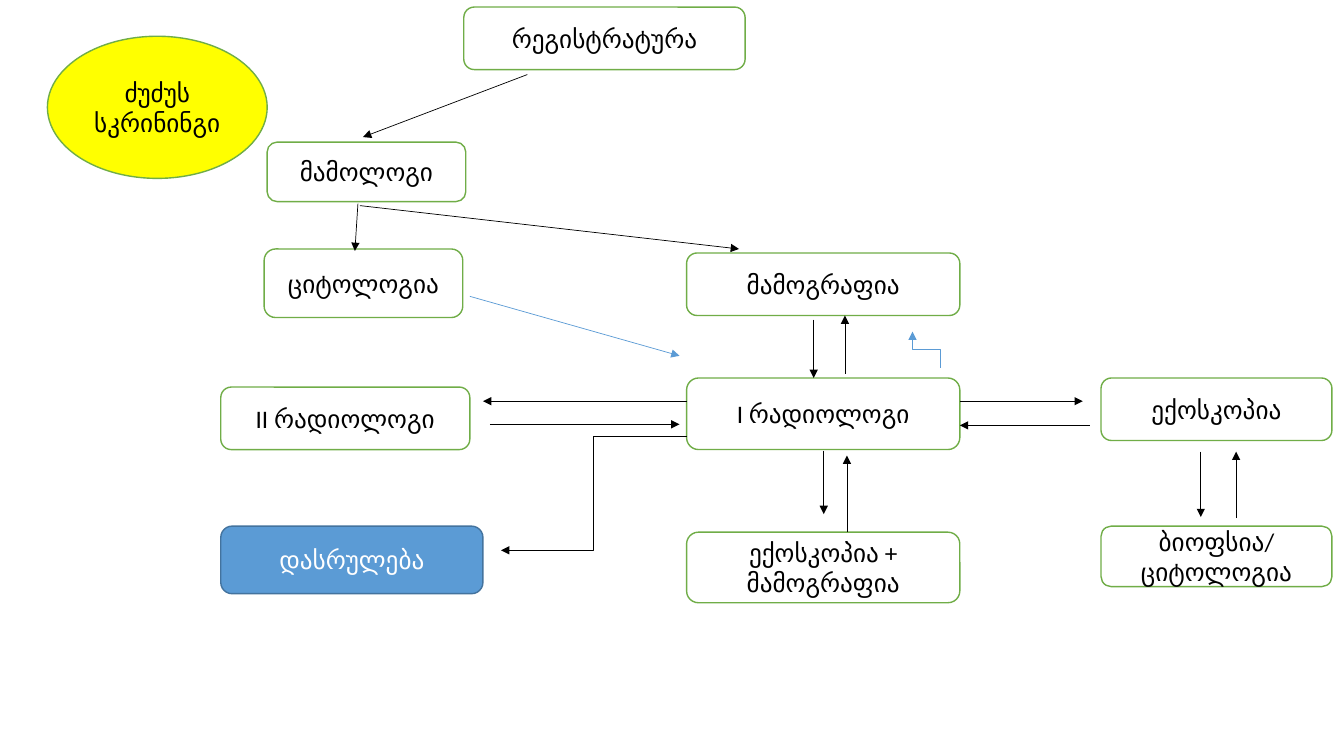
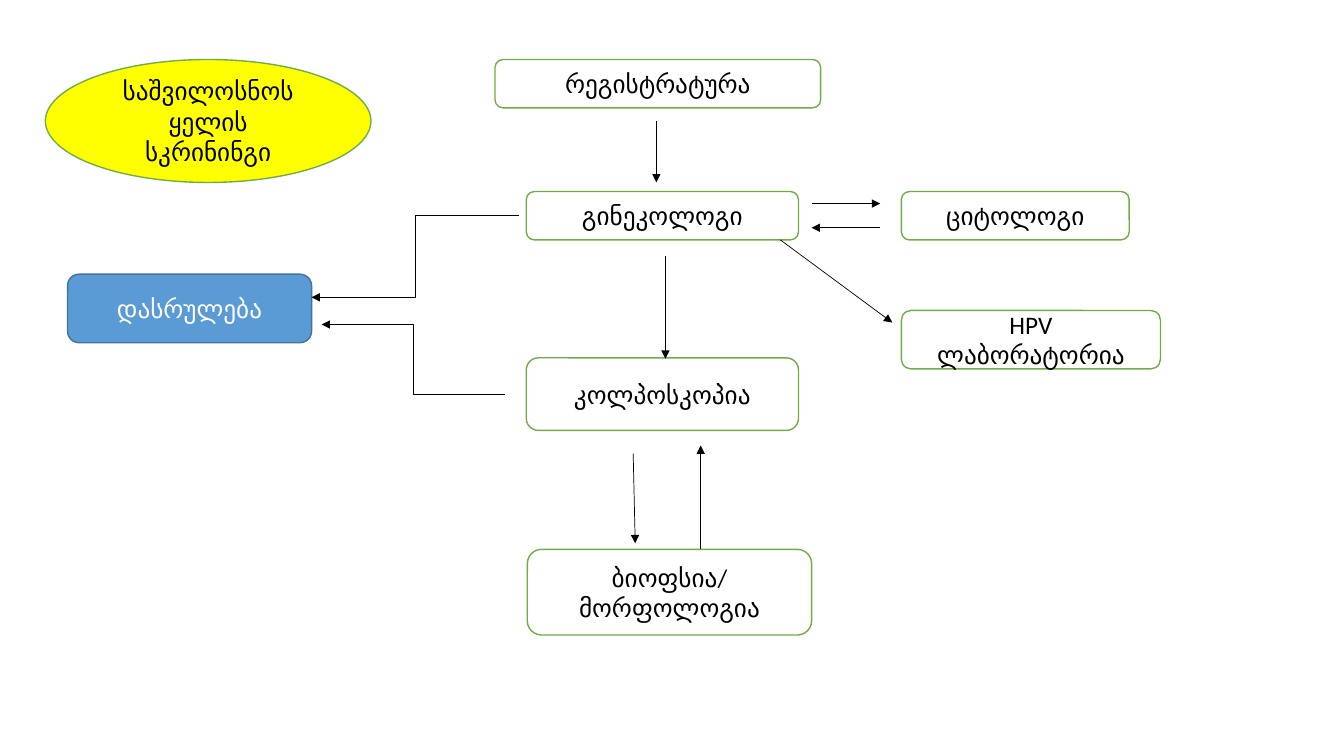
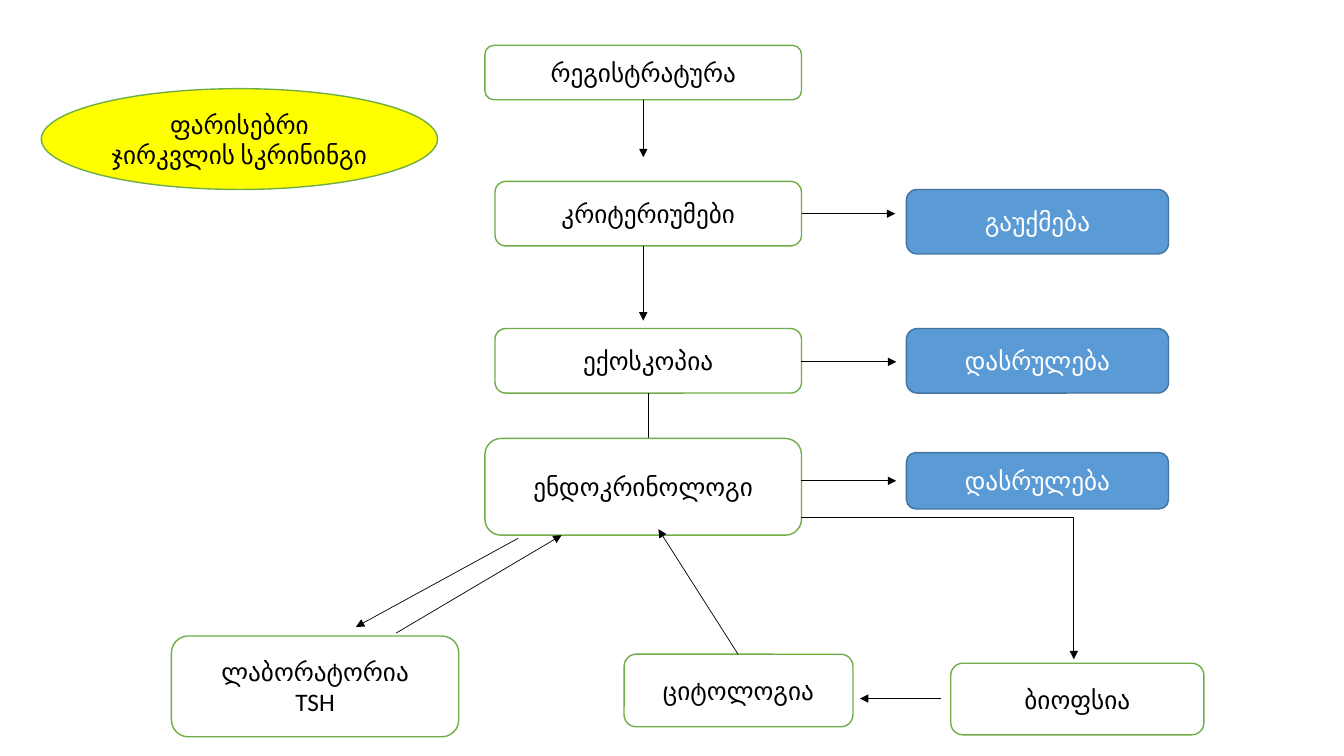
from dataclasses import dataclass
from enum import Enum
from typing import Union

from lxml import etree
from pptx import Presentation
from pptx import util as u
from pptx.dml.color import RGBColor
from pptx.enum import shapes, text
from pptx.oxml import ns

PX = 9144
SLIDE_WIDTH, SLIDE_HEIGHT = 1333, 750
FONT = "Calibri"
FONT_SIZE = u.Pt(18)
BOX_LINE = u.Pt(1)
ARROW_LINE = u.Pt(0.5)
QUARTER_TURN_BACK = "16200000"

BLACK = RGBColor(0x00, 0x00, 0x00)
WHITE = RGBColor(0xFF, 0xFF, 0xFF)
YELLOW = RGBColor(0xFF, 0xFF, 0x00)
GREEN = RGBColor(0x70, 0xAD, 0x47)
BLUE = RGBColor(0x5B, 0x9B, 0xD5)
DARK_BLUE = RGBColor(0x43, 0x73, 0x9E)


@dataclass(frozen=True)
class Style:
    outline: shapes.MSO_SHAPE
    fill: RGBColor
    line: RGBColor
    font: RGBColor


ROUNDED = shapes.MSO_SHAPE.ROUNDED_RECTANGLE
TOPIC = Style(shapes.MSO_SHAPE.OVAL, YELLOW, GREEN, BLACK)
STEP = Style(ROUNDED, WHITE, GREEN, BLACK)
FINISH = Style(ROUNDED, BLUE, DARK_BLUE, WHITE)


class Route(Enum):
    STRAIGHT = "straight"
    ACROSS = "across"
    UPWARD = "upward"
    CORNER = "corner"


@dataclass(frozen=True)
class Node:
    style: Style
    label: str
    left: int
    top: int
    width: int
    height: int


@dataclass(frozen=True)
class Arrow:
    start_x: int
    start_y: int
    end_x: int
    end_y: int
    route: Route = Route.STRAIGHT
    color: RGBColor = BLACK


Item = Union[Node, Arrow]


def px(length: float) -> int:
    return round(length * PX)


def draw_node(page, node: Node) -> None:
    box = page.shapes.add_shape(
        node.style.outline,
        px(node.left), px(node.top), px(node.width), px(node.height),
    )
    box.shadow.inherit = False
    box.fill.solid()
    box.fill.fore_color.rgb = node.style.fill
    box.line.color.rgb = node.style.line
    box.line.width = BOX_LINE
    frame = box.text_frame
    frame.word_wrap = True
    frame.vertical_anchor = text.MSO_ANCHOR.MIDDLE
    frame.text = node.label
    for para in frame.paragraphs:
        para.alignment = text.PP_ALIGN.CENTER
        for span in para.runs:
            span.font.name = FONT
            span.font.size = FONT_SIZE
            span.font.color.rgb = node.style.font


def connector_ends(arrow: Arrow) -> tuple[float, float, float, float]:
    if arrow.route is not Route.UPWARD:
        return arrow.start_x, arrow.start_y, arrow.end_x, arrow.end_y
    center_x = (arrow.start_x + arrow.end_x) / 2
    center_y = (arrow.start_y + arrow.end_y) / 2
    reach_x = center_y - arrow.start_y
    reach_y = arrow.start_x - center_x
    return (center_x + reach_x, center_y + reach_y,
            center_x - reach_x, center_y - reach_y)


def draw_arrow(page, arrow: Arrow) -> None:
    kind = (shapes.MSO_CONNECTOR.STRAIGHT if arrow.route is Route.STRAIGHT
            else shapes.MSO_CONNECTOR.ELBOW)
    connector = page.shapes.add_connector(
        kind, *(px(end) for end in connector_ends(arrow)))
    connector.line.color.rgb = arrow.color
    connector.line.width = ARROW_LINE
    properties = connector._element.spPr
    if arrow.route is Route.UPWARD:
        properties.find(ns.qn("a:xfrm")).set("rot", QUARTER_TURN_BACK)
    if arrow.route is Route.CORNER:
        properties.find(ns.qn("a:prstGeom")).set("prst", "bentConnector2")
    line = properties.find(ns.qn("a:ln"))
    etree.SubElement(line, ns.qn("a:tailEnd"), type="triangle")
    etree.SubElement(properties, ns.qn("a:effectLst"))


def draw_page(deck, items: list[Item]) -> None:
    page = deck.slides.add_slide(deck.slide_layouts.get_by_name("Blank"))
    for item in items:
        if isinstance(item, Node):
            draw_node(page, item)
        else:
            draw_arrow(page, item)


BREAST_SCREENING: list[Item] = [
    Node(STEP, "რეგისტრატურა", 460, 7, 279, 62),
    Node(TOPIC, "ძუძუს სკრინინგი", 47, 36, 218, 141),
    Node(STEP, "მამოლოგი", 265, 141, 197, 59),
    Node(STEP, "ციტოლოგია", 262, 247, 197, 68),
    Node(STEP, "მამოგრაფია", 681, 251, 271, 62),
    Node(STEP, "I რადიოლოგი", 681, 375, 271, 71),
    Node(STEP, "ექოსკოპია", 1092, 375, 229, 62),
    Node(STEP, "ექოსკოპია + მამოგრაფია", 681, 528, 271, 70),
    Node(STEP, "ბიოფსია/\nციტოლოგია", 1092, 522, 229, 60),
    Node(STEP, "II რადიოლოგი", 219, 384, 247, 62),
    Node(FINISH, "დასრულება", 219, 522, 260, 67),
    Arrow(523, 74, 360, 136),
    Arrow(357, 204, 733, 247),
    Arrow(355, 202, 352, 249),
    Arrow(807, 317, 807, 375),
    Arrow(838, 371, 838, 313),
    Arrow(1081, 422, 952, 422),
    Arrow(817, 447, 817, 510),
    Arrow(840, 528, 840, 452),
    Arrow(1191, 448, 1191, 513),
    Arrow(1226, 514, 1226, 448),
    Arrow(681, 398, 479, 398),
    Arrow(486, 421, 674, 421),
    Arrow(681, 433, 497, 546, Route.ACROSS),
    Arrow(952, 398, 1074, 398),
    Arrow(466, 294, 674, 353, color=BLUE),
    Arrow(933, 365, 905, 329, Route.UPWARD, BLUE),
]

CERVICAL_SCREENING: list[Item] = [
    Node(TOPIC, "საშვილოსნოს ყელის სკრინინგი", 45, 59, 323, 122),
    Node(STEP, "რეგისტრატურა", 491, 59, 323, 48),
    Node(STEP, "გინეკოლოგი", 522, 190, 270, 48),
    Node(STEP, "ციტოლოგი", 894, 190, 226, 48),
    Node(FINISH, "დასრულება", 67, 272, 242, 68),
    Node(STEP, "კოლპოსკოპია", 522, 355, 270, 72),
    Node(STEP, "ბიოფსია/\nმორფოლოგია", 523, 545, 282, 85),
    Node(STEP, "HPV ლაბორატორია", 894, 308, 257, 58),
    Arrow(651, 120, 651, 181),
    Arrow(805, 202, 873, 202),
    Arrow(873, 226, 805, 226),
    Arrow(515, 214, 309, 295, Route.ACROSS),
    Arrow(660, 254, 660, 356),
    Arrow(501, 391, 319, 322, Route.ACROSS),
    Arrow(628, 450, 630, 539),
    Arrow(695, 545, 695, 442),
    Arrow(774, 238, 885, 320),
]

THYROID_SCREENING: list[Item] = [
    Node(TOPIC, "ფარისებრი ჯირკვლის სკრინინგი", 41, 88, 393, 100),
    Node(STEP, "რეგისტრატურა", 481, 45, 314, 54),
    Node(STEP, "კრიტერიუმები", 491, 180, 304, 64),
    Node(STEP, "ექოსკოპია", 491, 326, 304, 64),
    Arrow(643, 390, 643, 443),
    Node(STEP, "ენდოკრინოლოგი", 481, 435, 314, 96),
    Node(STEP, "ლაბორატორია\nTSH", 170, 631, 285, 100),
    Node(STEP, "ციტოლოგია", 619, 649, 227, 72),
    Node(STEP, "ბიოფსია", 943, 658, 251, 71),
    Node(FINISH, "გაუქმება", 899, 188, 260, 64),
    Node(FINISH, "დასრულება", 899, 326, 260, 64),
    Node(FINISH, "დასრულება", 899, 449, 260, 56),
    Arrow(638, 99, 638, 156),
    Arrow(638, 244, 638, 318),
    Arrow(795, 212, 888, 212),
    Arrow(794, 359, 889, 359),
    Arrow(794, 477, 889, 477),
    Arrow(514, 534, 353, 622),
    Arrow(393, 628, 557, 531),
    Arrow(794, 513, 1065, 654, Route.CORNER),
    Arrow(933, 693, 853, 693),
    Arrow(732, 649, 653, 525),
]


def main() -> None:
    deck = Presentation()
    deck.slide_width = px(SLIDE_WIDTH)
    deck.slide_height = px(SLIDE_HEIGHT)
    for items in (BREAST_SCREENING, CERVICAL_SCREENING, THYROID_SCREENING):
        draw_page(deck, items)
    deck.save("out.pptx")


if __name__ == "__main__":
    main()
